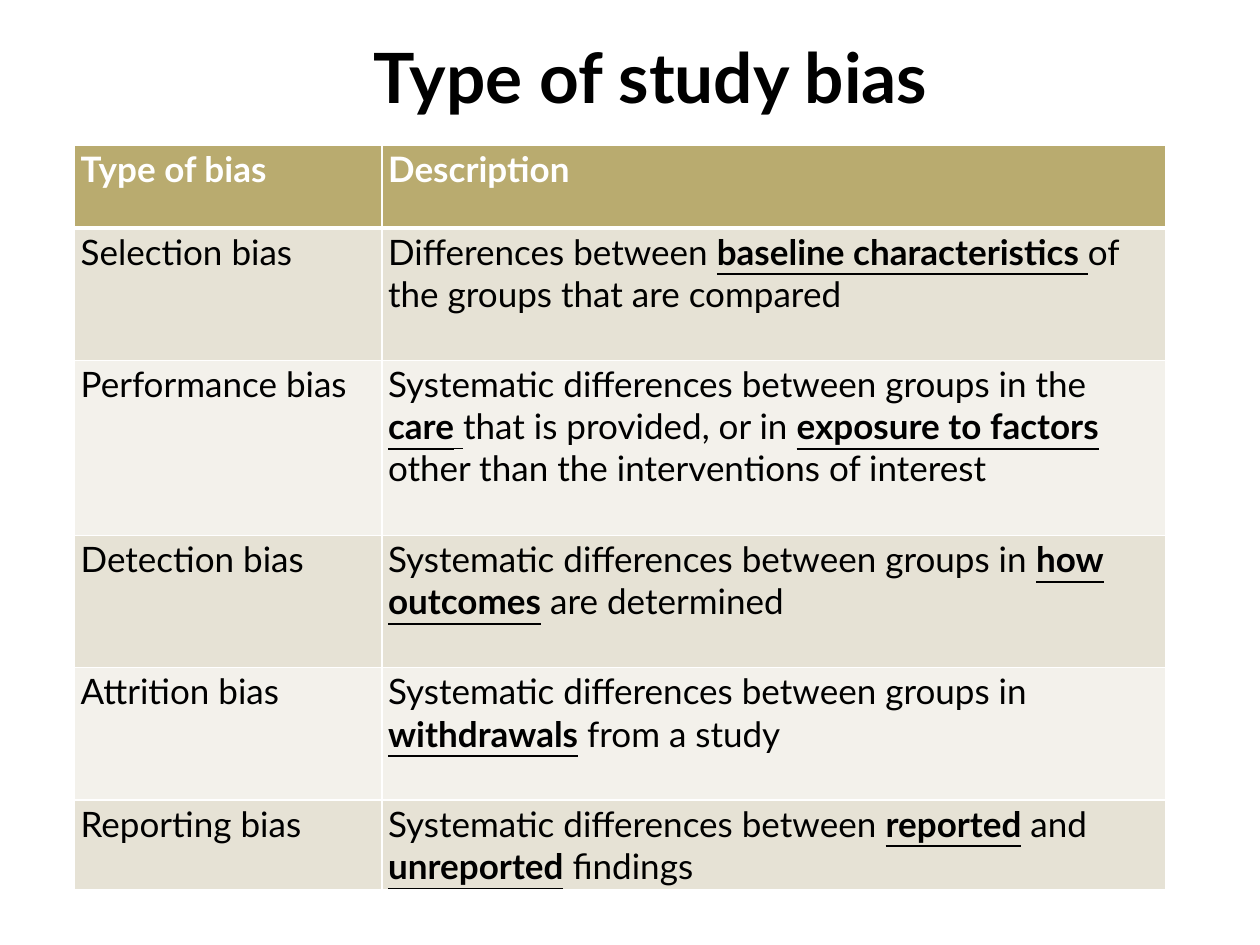
import pptx
import pptx.util
import pptx.dml.color
import pptx.enum.text
import pptx.oxml
import pptx.oxml.ns
import lxml.etree

Inches = pptx.util.Inches
Pt = pptx.util.Pt


def color(value):
    return pptx.dml.color.RGBColor.from_string(value)


def style_run(run, size, value, bold, underline=False):
    run.font.name = "Lato"
    run.font.size = Pt(size)
    run.font.color.rgb = color(value)
    run.font.bold = bold
    run.font.underline = underline


presentation = pptx.Presentation()
presentation.slide_width = Inches(10)
presentation.slide_height = Inches(7.5)
slide = presentation.slides.add_slide(presentation.slide_layouts[6])

title = slide.shapes.add_textbox(Inches(0.75), Inches(0.21), Inches(8.83), Inches(0.79))
title.text_frame.word_wrap = True
title.text_frame.vertical_anchor = pptx.enum.text.MSO_ANCHOR.MIDDLE
title.text_frame.text = "Type of study bias"
paragraph = title.text_frame.paragraphs[0]
paragraph.alignment = pptx.enum.text.PP_ALIGN.CENTER
style_run(paragraph.runs[0], 39.6, "000000", True)

PLAIN, KEY, GAP = (False, False), (True, True), (False, True)
rows = [
    (0.66, "Type of bias", [("Description", (True, False))]),
    (1.05, "Selection bias", [
        ("Differences between ", PLAIN), ("baseline characteristics ", KEY),
        ("of the groups that are compared", PLAIN)]),
    (1.39, "Performance bias", [
        ("Systematic differences between groups in the ", PLAIN), ("care", KEY), (" ", GAP),
        ("that is provided, or in ", PLAIN), ("exposure to factors ", KEY),
        ("other than the interventions of interest", PLAIN)]),
    (1.05, "Detection bias", [
        ("Systematic differences between groups in ", PLAIN), ("how", KEY), (" ", GAP),
        ("outcomes", KEY), (" are determined", PLAIN)]),
    (1.05, "Attrition bias", [
        ("Systematic differences between groups in ", PLAIN), ("withdrawals", KEY),
        (" from a study", PLAIN)]),
    (0.71, "Reporting bias", [
        ("Systematic differences between ", PLAIN), ("reported", KEY), (" and ", PLAIN),
        ("unreported", KEY), (" findings", PLAIN)]),
]

table = slide.shapes.add_table(
    len(rows), 2, Inches(0.59), Inches(1.15), Inches(8.66), Inches(5.91)).table
table.columns[0].width = Inches(2.44)
table.columns[1].width = Inches(6.22)

for row_index, (height, name, description) in enumerate(rows):
    table.rows[row_index].height = Inches(height)
    header = row_index == 0
    fill = "B9AB6F" if header else ("F3F1EB", "E6E2D5")[row_index % 2]
    for column_index, segments in enumerate([[(name, (header, False))], description]):
        cell = table.cell(row_index, column_index)
        cell.margin_left = cell.margin_right = Inches(0.05)
        cell.margin_top = cell.margin_bottom = Inches(0.02)
        paragraph = cell.text_frame.paragraphs[0]
        for text, (bold, underline) in segments:
            run = paragraph.add_run()
            run.text = text
            style_run(run, 20, "FFFFFF" if header else "000000", bold, underline)

        properties = cell._tc.get_or_add_tcPr()
        widths = {"lnL": 1, "lnR": 1, "lnT": 3 if row_index == 1 else 1, "lnB": 3 if header else 1}
        for side, width in widths.items():
            line = lxml.etree.SubElement(
                properties, pptx.oxml.ns.qn("a:" + side), w=str(Pt(width)))
            solid = lxml.etree.SubElement(line, pptx.oxml.ns.qn("a:solidFill"))
            lxml.etree.SubElement(solid, pptx.oxml.ns.qn("a:srgbClr"), val="FFFFFF")
        cell.fill.solid()
        cell.fill.fore_color.rgb = color(fill)

presentation.save("out.pptx")
